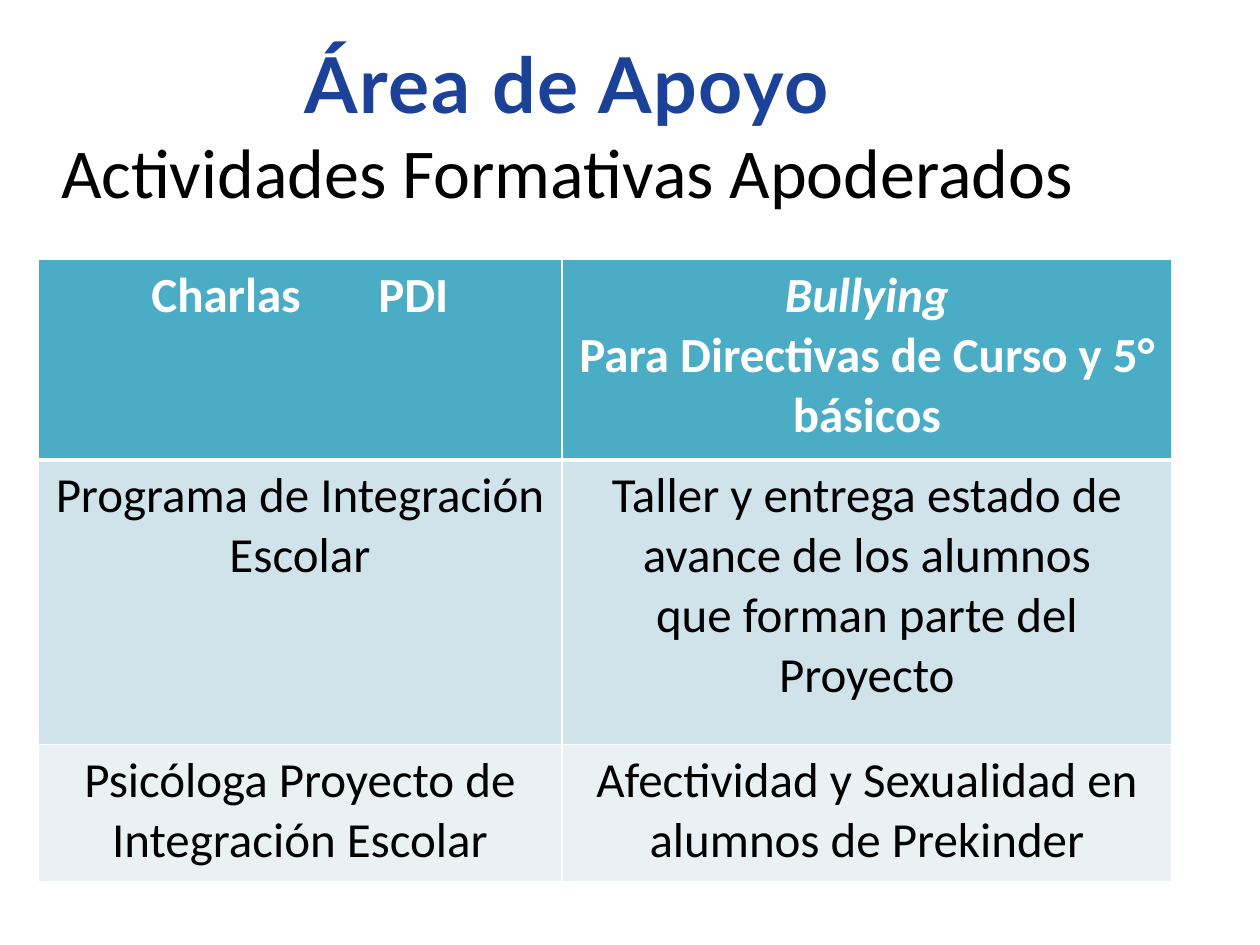
from lxml import etree
from pptx import Presentation
from pptx.dml.color import RGBColor
from pptx.enum.text import MSO_ANCHOR, PP_ALIGN
from pptx.oxml.ns import qn
from pptx.util import Inches, Pt

CENTER = PP_ALIGN.CENTER
TOP = MSO_ANCHOR.TOP

NAVY = RGBColor(0x1B, 0x42, 0x98)
BLACK = RGBColor(0, 0, 0)
WHITE = RGBColor(0xFF, 0xFF, 0xFF)
TEAL = RGBColor(0x4B, 0xAC, 0xC6)
BAND_DARK = RGBColor(0xD0, 0xE3, 0xEA)
BAND_LIGHT = RGBColor(0xE9, 0xF1, 0xF5)

BLANK_LAYOUT = 6
WORD_GAP = 38  # points added to the space between the two header words

COL_WIDTHS = (4.16, 4.84)
ROW_HEIGHTS = (1.59, 2.26, 1.09)
ROW_FILLS = (TEAL, BAND_DARK, BAND_LIGHT)
# Each cell is a list of paragraphs
ROWS = (
    (["Charlas PDI"],
     ["Bullying", "Para Directivas de Curso y 5° básicos"]),
    (["Programa de Integración Escolar"],
     ["Taller y entrega estado de avance de los alumnos",
      "que forman parte del Proyecto"]),
    (["Psicóloga Proyecto de", "Integración Escolar"],
     ["Afectividad y Sexualidad en alumnos de Prekinder"]),
)


def style(p, size, color, bold=False, name="Calibri"):
    p.alignment = CENTER
    p.font.size = Pt(size)
    p.font.name = name
    p.font.bold = bold
    p.font.color.rgb = color


def set_spacing(r, points):
    r.font._element.set("spc", str(points * 100))


def set_border(cell, side, width):
    tc_pr = cell._tc.get_or_add_tcPr()
    ln = etree.SubElement(tc_pr, qn(f"a:ln{side}"), w=str(Pt(width)))
    fill = etree.SubElement(ln, qn("a:solidFill"))
    etree.SubElement(fill, qn("a:srgbClr"), val=str(WHITE))


def add_heading(slide):
    sp = slide.shapes.add_textbox(0, Inches(0.24), Inches(9), Inches(0.98))
    tf = sp.text_frame
    tf.word_wrap = True
    tf.vertical_anchor = TOP
    p = tf.paragraphs[0]
    r = p.add_run()
    r.text = "Área de Apoyo"
    set_spacing(r, 1)
    style(p, 44, NAVY, bold=True, name="Lato")
    p = tf.add_paragraph()
    p.text = "Actividades Formativas Apoderados"
    style(p, 40, BLACK)


def fill_cell(cell, lines, fill, header):
    # Borders come before the fill in the cell properties
    for side in "LRTB":
        set_border(cell, side, 3 if header and side == "B" else 1)
    cell.fill.solid()
    cell.fill.fore_color.rgb = fill
    tf = cell.text_frame
    tf.text = "\n".join(lines)
    for p in tf.paragraphs:
        style(p, 28, WHITE if header else BLACK, bold=header)


def space_words(p, points):
    first, last = p.text.split()
    p.clear()
    for text in (first, " ", last):
        r = p.add_run()
        r.text = text
        if text == " ":
            set_spacing(r, points)


def add_activity_table(slide):
    frame = slide.shapes.add_table(
        len(ROWS), len(COL_WIDTHS), Inches(0.3), Inches(2.06),
        Inches(sum(COL_WIDTHS)), Inches(sum(ROW_HEIGHTS)))
    table = frame.table
    for column, width in zip(table.columns, COL_WIDTHS):
        column.width = Inches(width)
    for i, (height, fill, row) in enumerate(zip(ROW_HEIGHTS, ROW_FILLS, ROWS)):
        table.rows[i].height = Inches(height)
        for j, lines in enumerate(row):
            fill_cell(table.cell(i, j), lines, fill, header=i == 0)

    # Header details: wide word gap and italic term
    space_words(table.cell(0, 0).text_frame.paragraphs[0], WORD_GAP)
    table.cell(0, 1).text_frame.paragraphs[0].font.italic = True


def main():
    prs = Presentation()
    prs.slide_width = Inches(10)
    prs.slide_height = Inches(7.5)
    slide = prs.slides.add_slide(prs.slide_layouts[BLANK_LAYOUT])
    add_heading(slide)
    add_activity_table(slide)
    prs.save("out.pptx")


if __name__ == "__main__":
    main()
